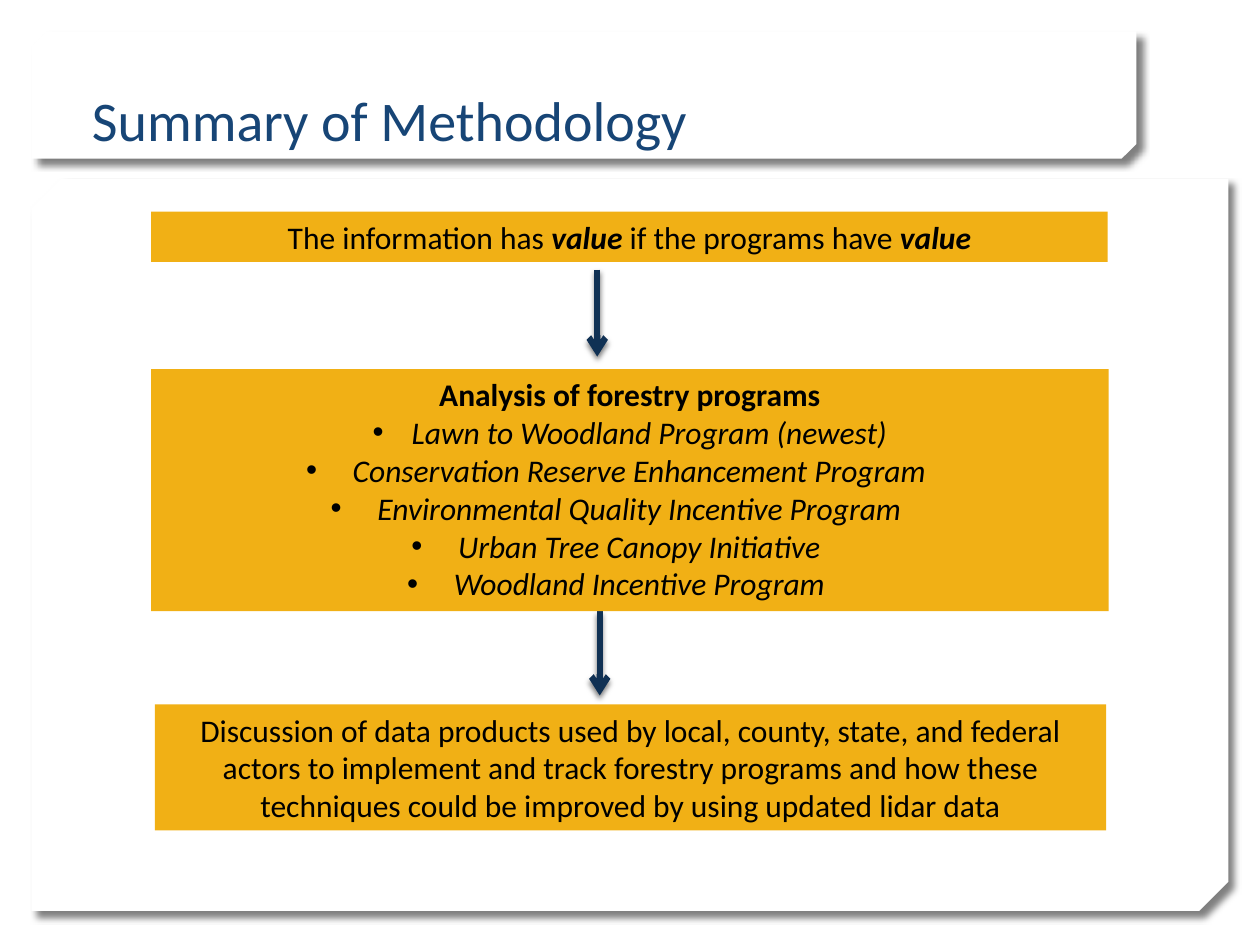
from lxml.etree import SubElement
from pptx import Presentation
from pptx.dml.color import RGBColor
from pptx.enum.shapes import MSO_CONNECTOR, MSO_SHAPE
from pptx.enum.text import MSO_ANCHOR, PP_ALIGN
from pptx.oxml import parse_xml
from pptx.oxml.ns import nsdecls, qn
from pptx.util import Inches, Pt

WHITE = RGBColor(0xFF, 0xFF, 0xFF)
BLACK = RGBColor(0x00, 0x00, 0x00)
GOLD = RGBColor(0xF1, 0xB0, 0x15)
NAVY = RGBColor(0x10, 0x31, 0x54)
TITLE_BLUE = RGBColor(0x17, 0x45, 0x76)


def add_shadow(shape, blur, distance, degrees):
    """Give the shape a half-transparent black outer shadow."""
    shape.element.spPr.append(parse_xml(
        f'<a:effectLst {nsdecls("a")}><a:outerShdw blurRad="{Pt(blur)}" dist="{Pt(distance)}" '
        f'dir="{degrees * 60000}" algn="ctr" rotWithShape="0"><a:srgbClr val="000000">'
        '<a:alpha val="50000"/></a:srgbClr></a:outerShdw></a:effectLst>'))


def write(para, text, size=18, color=BLACK, bold=False, italic=False):
    span = para.add_run()
    span.text = text
    span.font.name = "Calibri"
    span.font.size = Pt(size)
    span.font.color.rgb = color
    span.font.bold = bold
    span.font.italic = italic


deck = Presentation()
deck.slide_width, deck.slide_height = Inches(10), Inches(7.5)
page = deck.slides.add_slide(deck.slide_layouts[5])

# White panels with a snipped lower right corner
for top, width, height, snip in [(0.25, 8.77, 1.01, 0.117), (1.42, 9.5, 5.81, 0.04)]:
    panel = page.shapes.add_shape(MSO_SHAPE.SNIP_2_DIAG_RECTANGLE, Inches(0.25), Inches(top),
                                  Inches(width), Inches(height))
    panel.adjustments[0] = 0
    panel.adjustments[1] = snip
    panel.element.spPr.find(qn("a:xfrm")).set("flipV", "1")
    panel.fill.solid()
    panel.fill.fore_color.rgb = WHITE
    panel.line.fill.background()
    add_shadow(panel, 4, 5, 45)

# Title, brought in front of the panels
title = page.shapes.title
title.left, title.top = Inches(0.63), Inches(0.01)
title.width, title.height = Inches(8.29), Inches(1.25)
title.text_frame.vertical_anchor = MSO_ANCHOR.BOTTOM
title_para = title.text_frame.paragraphs[0]
title_para.alignment = PP_ALIGN.LEFT
write(title_para, "Summary of Methodology", size=32, color=TITLE_BLUE)
panel.element.addnext(title.element)

# Arrows between the steps
for x, start, end in [(4.74, 2.14, 2.83), (4.76, 4.85, 5.52)]:
    arrow = page.shapes.add_connector(MSO_CONNECTOR.STRAIGHT, Inches(x), Inches(start),
                                      Inches(x), Inches(end))
    arrow.line.color.rgb = NAVY
    arrow.line.width = Pt(3.5)
    SubElement(arrow.line._get_or_add_ln(), qn("a:tailEnd"), type="arrow")
    add_shadow(arrow, 3, 2, 90)

# Step boxes
frames = []
for left, top, width, height in [(1.2, 1.68, 7.59, 0.4), (1.2, 2.93, 7.6, 1.92),
                                 (1.23, 5.59, 7.55, 1)]:
    box = page.shapes.add_shape(MSO_SHAPE.RECTANGLE, Inches(left), Inches(top),
                                Inches(width), Inches(height))
    box.shadow.inherit = False
    box.fill.solid()
    box.fill.fore_color.rgb = GOLD
    box.line.fill.background()
    box.text_frame.word_wrap = True
    box.text_frame.vertical_anchor = MSO_ANCHOR.TOP
    box.text_frame.paragraphs[0].alignment = PP_ALIGN.CENTER
    frames.append(box.text_frame)
value_frame, program_frame, discussion_frame = frames

for text, strong in [("The information has ", False), ("value", True),
                     (" if the programs have ", False), ("value", True)]:
    write(value_frame.paragraphs[0], text, bold=strong, italic=strong)

write(program_frame.paragraphs[0], "Analysis of forestry programs", bold=True)
# Each program: text, left margin and right margin in inches
for program, margin, right in [("Lawn to Woodland Program (newest)", 0.31, 0),
                               ("Conservation Reserve Enhancement Program", 0.37, 0.22),
                               ("Environmental Quality Incentive Program", 0.37, 0.22),
                               ("Urban Tree Canopy Initiative", 0.37, 0.22),
                               ("Woodland Incentive Program", 0.37, 0.22)]:
    para = program_frame.add_paragraph()
    para.alignment = PP_ALIGN.CENTER
    properties = para._p.get_or_add_pPr()
    properties.set("marL", str(Inches(margin)))
    properties.set("marR", str(Inches(right)))
    properties.set("indent", str(-Inches(margin)))
    SubElement(properties, qn("a:buFont"), typeface="Arial")
    SubElement(properties, qn("a:buChar"), char="•")
    write(para, program, italic=True)

write(discussion_frame.paragraphs[0],
      "Discussion of data products used by local, county, state, and federal actors to implement "
      "and track forestry programs and how these techniques could be improved by using updated "
      "lidar data")

deck.save("out.pptx")
